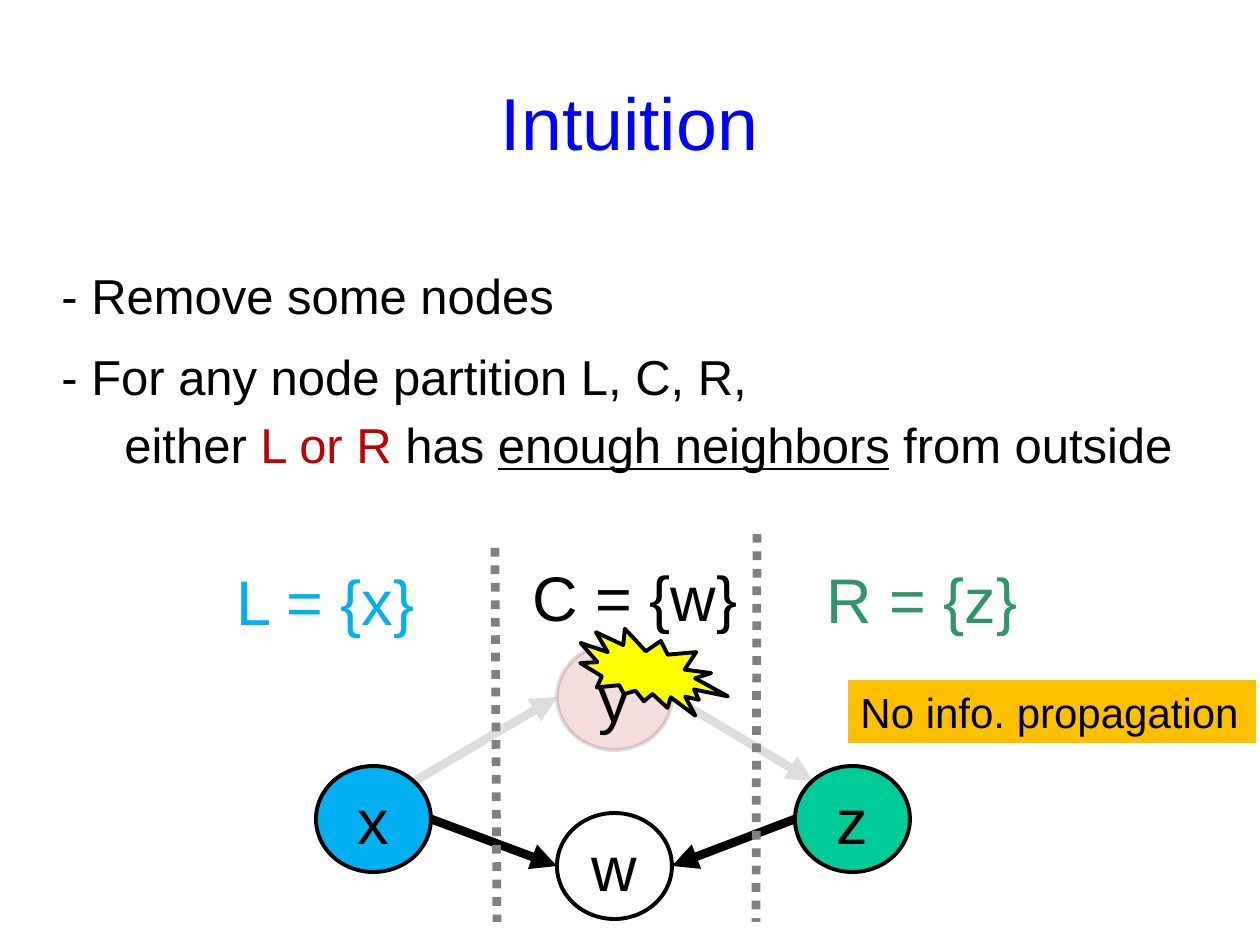
"""Build the slide that shows a node partition after one node is removed."""
from dataclasses import dataclass
from typing import Any, Optional

from lxml.etree import SubElement
from pptx import Presentation
from pptx.dml.color import RGBColor
from pptx.enum.dml import MSO_LINE
from pptx.enum.shapes import MSO_CONNECTOR, MSO_SHAPE
from pptx.enum.text import MSO_ANCHOR, MSO_AUTO_SIZE, PP_ALIGN
from pptx.oxml.ns import qn
from pptx.util import Inches, Pt

SCALE = Inches(1) / 126
Box = tuple[int, int, int, int]


@dataclass(frozen=True)
class Theme:
    font: str = "Arial"
    blue: str = "0000FF"
    black: str = "000000"
    red: str = "C00000"
    sky: str = "00B0F0"
    mint: str = "00CC99"
    green: str = "32946A"
    gray: str = "808080"
    yellow: str = "FFFF00"
    amber: str = "FFC000"
    head: int = 42
    large: int = 36
    body: int = 28
    note: int = 24
    thin: float = 2.25
    thick: int = 5
    faint: int = 13
    lead: float = 0.2


T = Theme()


@dataclass(frozen=True)
class Node:
    name: str
    left: int
    top: int
    fill: Optional[str] = None
    alpha: int = 100


@dataclass(frozen=True)
class Edge:
    start: tuple[int, int]
    end: tuple[int, int]
    color: str = T.black
    alpha: int = 100
    dotted: bool = False


@dataclass(frozen=True)
class Label:
    text: str
    box: Box
    color: str = T.black
    size: int = T.large
    fill: Optional[str] = None


@dataclass(frozen=True)
class Span:
    text: str
    color: str = T.black
    under: bool = False


SIZE = (115, 106)
NODES = [
    Node("x", 316, 766, T.sky),
    Node("y", 557, 644, T.red, T.faint),
    Node("z", 795, 766, T.mint),
    Node("w", 557, 813),
]
EDGES = [
    Edge((415, 781), (557, 697), alpha=T.faint),
    Edge((672, 697), (813, 781), alpha=T.faint),
    Edge((431, 819), (557, 866)),
    Edge((795, 819), (672, 866)),
    Edge((495, 548), (497, 922), T.gray, dotted=True),
    Edge((757, 534), (756, 922), T.gray, dotted=True),
]
LABELS = [
    Label("L = {x}", (223, 556, 205, 89), T.sky),
    Label("R = {z}", (813, 554, 218, 89), T.green),
    Label("C = {w}", (519, 552, 232, 89)),
]
NOTE = Label("No info. propagation", (848, 680, 408, 63), T.black, T.note, T.amber)
LINES = [
    ([Span("- Remove some nodes")],
     {"line_spacing": 2.0, "space_before": Pt(T.body * T.lead)}),
    ([Span("- For any node partition L, C, R,")], {"space_before": Pt(12.7)}),
    ([Span("either "), Span("L or R ", T.red), Span("has "),
      Span("enough neighbors", under=True), Span(" from outside")],
     {"space_before": Pt(T.body * T.lead)}),
]


def px(*vals: int) -> list[int]:
    """Turn pixels into EMU."""
    return [round(val * SCALE) for val in vals]


def apply(item: Any, **form: Any) -> None:
    """Set each format value on an object."""
    for key, val in form.items():
        setattr(item, key, val)


def write(para: Any, span: Span, size: int) -> None:
    """Add one formatted run to a paragraph."""
    run = para.add_run()
    run.text = span.text
    apply(run.font, name=T.font, size=Pt(size), underline=span.under)
    run.font.color.rgb = RGBColor.from_string(span.color)


def paint(fill: Any, color: Optional[str], alpha: int = 100) -> None:
    """Fill with a solid colour, or with nothing."""
    if color is None:
        fill.background()
        return
    fill.solid()
    fill.fore_color.rgb = RGBColor.from_string(color)
    if alpha < 100:
        for tone in fill._xPr.iter(qn("a:solidFill")):
            if tone.getparent() is fill._xPr:
                SubElement(tone[0], qn("a:alpha"), val=str(alpha * 1000))


def shape(shapes: Any, kind: Any, box: Box, color: Optional[str],
          alpha: int = 100) -> Any:
    """Add an outlined preset shape."""
    item = shapes.add_shape(kind, *px(*box))
    item.shadow.inherit = False
    paint(item.fill, color, alpha)
    paint(item.line.fill, T.black, alpha)
    item.line.width = Pt(T.thin)
    return item


def node(shapes: Any, spec: Node) -> None:
    """Draw a graph node with its name."""
    item = shape(shapes, MSO_SHAPE.OVAL, (spec_left(spec), spec.top, *SIZE),
                 spec.fill, spec.alpha)
    apply(item.text_frame, vertical_anchor=MSO_ANCHOR.TOP, margin_top=0,
          margin_bottom=0)
    para = item.text_frame.paragraphs[0]
    apply(para, alignment=PP_ALIGN.CENTER, space_before=Pt(T.large * T.lead))
    write(para, Span(spec.name), T.large)


def spec_left(item: Node) -> int:
    """Give the left side of a node."""
    return item.left


def edge(shapes: Any, item: Edge) -> None:
    """Draw an arrow or a dotted divider."""
    line = shapes.add_connector(MSO_CONNECTOR.STRAIGHT, *px(*item.start, *item.end))
    paint(line.line.fill, item.color, item.alpha)
    line.line.width = Pt(T.thick)
    if item.dotted:
        line.line.dash_style = MSO_LINE.ROUND_DOT
    else:
        SubElement(line.line._get_or_add_ln(), qn("a:tailEnd"), type="triangle")
    SubElement(line._element.spPr, qn("a:effectLst"))


def label(shapes: Any, item: Label) -> None:
    """Draw a one-line label, centred unless it is filled."""
    box = shapes.add_textbox(*px(*item.box))
    paint(box.fill, item.fill)
    apply(box.text_frame, word_wrap=False, auto_size=MSO_AUTO_SIZE.SHAPE_TO_FIT_TEXT)
    para = box.text_frame.paragraphs[0]
    if item.fill is None:
        apply(para, alignment=PP_ALIGN.CENTER, space_before=Pt(item.size * T.lead))
    write(para, Span(item.text, item.color), item.size)


def title(shapes: Any) -> None:
    """Place and write the slide title."""
    item = shapes.title
    left, top, width, height = px(94, 42, 1071, 158)
    apply(item, left=left, top=top, width=width, height=height)
    item.text_frame.vertical_anchor = MSO_ANCHOR.MIDDLE
    para = item.text_frame.paragraphs[0]
    para.alignment = PP_ALIGN.CENTER
    write(para, Span("Intuition", T.blue), T.head)


def body(shapes: Any) -> None:
    """Write the points above the graph."""
    frame = shapes.add_textbox(*px(49, 200, 1164, 606)).text_frame
    frame.word_wrap = True
    for row, (spans, form) in enumerate(LINES):
        para = frame.add_paragraph() if row else frame.paragraphs[0]
        apply(para, **form)
        for span in spans:
            write(para, span, T.body)
    para._p.get_or_add_pPr().set("marL", str(Inches(0.5)))


def main() -> None:
    """Build and save the slide."""
    deck = Presentation()
    apply(deck, slide_width=Inches(10), slide_height=Inches(7.5))
    shapes = deck.slides.add_slide(deck.slide_layouts[5]).shapes
    title(shapes)
    body(shapes)
    for draw, items in ((node, NODES), (edge, EDGES), (label, LABELS)):
        for item in items:
            draw(shapes, item)
    burst = shape(shapes, MSO_SHAPE.EXPLOSION2, (575, 634, 155, 78), T.yellow)
    burst.rotation = 28.2
    label(shapes, NOTE)
    deck.save("out.pptx")


if __name__ == "__main__":
    main()
